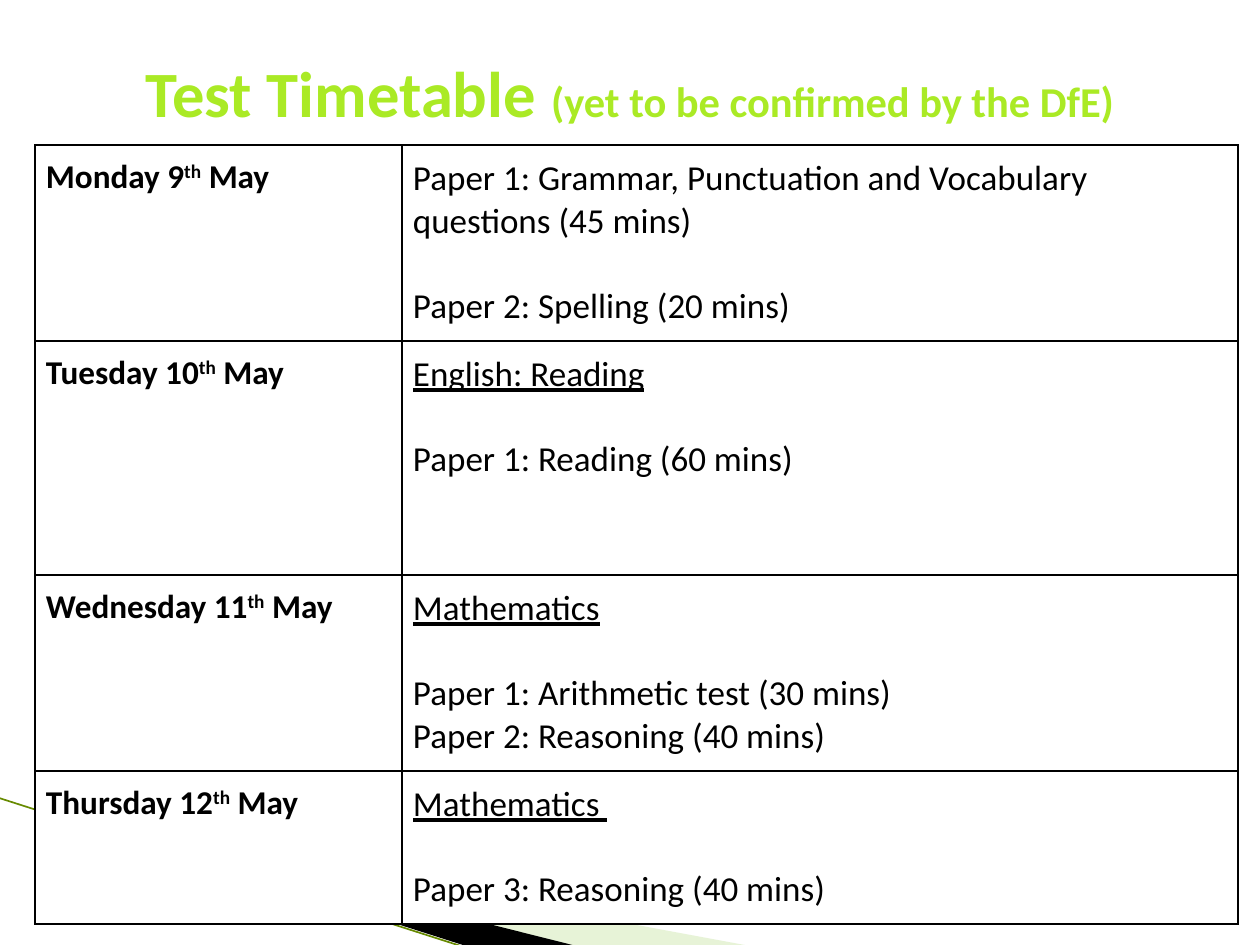
import pptx
import pptx.dml.color
import pptx.enum.shapes
import pptx.enum.text
import pptx.oxml
import pptx.oxml.ns
import pptx.util

SCALE = 914400 / 126
DAY = {"size": pptx.util.Pt(19), "bold": True}
PAPER = {"size": pptx.util.Pt(20), "bold": False}
SUBJECT = {**PAPER, "underline": True}
GAP = {"space_before": pptx.util.Pt(24.4)}

TIMETABLE = [
    (196, "Monday 9", [
        ("Paper 1: Grammar, Punctuation and Vocabulary questions (45 mins)", PAPER, {}),
        ("Paper 2: Spelling (20 mins)", PAPER, GAP)]),
    (234, "Tuesday 10", [
        ("English: Reading", SUBJECT, {}),
        ("Paper 1: Reading (60 mins)", PAPER, GAP)]),
    (196, "Wednesday 11", [
        ("Mathematics", SUBJECT, {}),
        ("Paper 1: Arithmetic test (30 mins)", PAPER, GAP),
        ("Paper 2: Reasoning (40 mins)", PAPER, {})]),
    (153, "Thursday 12", [
        ("Mathematics ", SUBJECT, {}),
        ("Paper 3: Reasoning (40 mins)", PAPER, GAP)]),
]


def px(length):
    return pptx.util.Emu(round(length * SCALE))


def color(code):
    return pptx.dml.color.RGBColor.from_string(code)


def apply(target, values):
    for name, value in values.items():
        setattr(target, name, value)


class TimetableSlide:
    """Hold the style and the current slide, and draw each kind of element."""

    font_name = "Calibri"
    ink = "000000"
    paper = "FFFFFF"
    accent = "AAEA25"

    def __init__(self, presentation):
        self.slide = presentation.slides.add_slide(presentation.slide_layouts[5])

    def add_run(self, paragraph, text, values, code, baseline=None):
        run = paragraph.add_run()
        run.text = text
        apply(run.font, {"name": self.font_name, **values})
        run.font.color.rgb = color(code)
        if baseline:
            run._r.get_or_add_rPr().set("baseline", str(baseline * 1000))

    def add_title(self, box, parts):
        title = self.slide.shapes.title
        apply(title, dict(zip(("left", "top", "width", "height"), map(px, box))))
        frame = title.text_frame
        apply(frame, {"word_wrap": True,
                      "auto_size": pptx.enum.text.MSO_AUTO_SIZE.NONE,
                      "vertical_anchor": pptx.enum.text.MSO_ANCHOR.MIDDLE})
        paragraph = frame.paragraphs[0]
        paragraph.alignment = pptx.enum.text.PP_ALIGN.CENTER
        for text, size in parts:
            self.add_run(paragraph, text, {"size": pptx.util.Pt(size), "bold": True}, self.accent)

    def add_wedge(self, points, code, opacity=100):
        builder = self.slide.shapes.build_freeform(*points[0], scale=SCALE)
        builder.add_line_segments(points[1:], close=True)
        shape = builder.convert_to_shape()
        shape.shadow.inherit = False
        shape.line.fill.background()
        shape.fill.solid()
        shape.fill.fore_color.rgb = color(code)
        if opacity < 100:
            fill_color = shape._element.spPr.find(".//" + pptx.oxml.ns.qn("a:srgbClr"))
            alpha = pptx.oxml.parse_xml(
                f'<a:alpha {pptx.oxml.ns.nsdecls("a")} val="{opacity * 1000}"/>')
            fill_color.append(alpha)

    def add_line(self, start, end, code, width):
        line = self.slide.shapes.add_connector(
            pptx.enum.shapes.MSO_CONNECTOR.STRAIGHT, *map(px, start + end))
        line.line.color.rgb = color(code)
        line.line.width = pptx.util.Pt(width)
        line._element.spPr.append(
            pptx.oxml.parse_xml(f'<a:effectLst {pptx.oxml.ns.nsdecls("a")}/>'))

    def format_cell(self, cell):
        apply(cell, {"margin_left": px(11), "margin_right": px(12),
                     "margin_top": px(12), "margin_bottom": px(12)})
        properties = cell._tc.get_or_add_tcPr()
        for side in "LRTB":
            properties.append(pptx.oxml.parse_xml(
                f'<a:ln{side} {pptx.oxml.ns.nsdecls("a")} w="12700"><a:solidFill>'
                f'<a:srgbClr val="{self.ink}"/></a:solidFill></a:ln{side}>'))
        cell.fill.solid()
        cell.fill.fore_color.rgb = color(self.paper)

    def add_timetable(self, left, top, widths, rows):
        height = sum(row[0] for row in rows)
        table = self.slide.shapes.add_table(
            len(rows), len(widths), px(left), px(top), px(sum(widths)), px(height)).table
        apply(table, {"first_row": False, "horz_banding": False})
        for column, width in zip(table.columns, widths):
            column.width = px(width)
        for row, (row_height, day, papers) in zip(table.rows, rows):
            row.height = px(row_height)
            day_cell, paper_cell = row.cells
            self.format_cell(day_cell)
            self.format_cell(paper_cell)
            paragraph = day_cell.text_frame.paragraphs[0]
            for text, baseline in ((day, None), ("th", 30), (" May", None)):
                self.add_run(paragraph, text, DAY, self.ink, baseline)
            frame = paper_cell.text_frame
            for index, (text, values, spacing) in enumerate(papers):
                paragraph = frame.add_paragraph() if index else frame.paragraphs[0]
                apply(paragraph, spacing)
                self.add_run(paragraph, text, values, self.ink)


def main():
    presentation = pptx.Presentation()
    apply(presentation, {"slide_width": px(1260), "slide_height": px(945)})
    page = TimetableSlide(presentation)
    page.add_wedge([(69, 820), (750, 946), (575, 946), (69, 819)], "C3E19D", 40)
    page.add_wedge([(67, 818), (576, 946), (469, 947), (68, 819)], "000000")
    page.add_line((-1, 798), (467, 948), "678A00", 0.95)
    page.add_timetable(35, 145, (367, 836), TIMETABLE)
    page.add_title((63, 38, 1134, 107),
                   [("Test Timetable ", 36.9), ("(yet to be confirmed by the DfE)", 24.3)])
    presentation.save("out.pptx")


if __name__ == "__main__":
    main()
